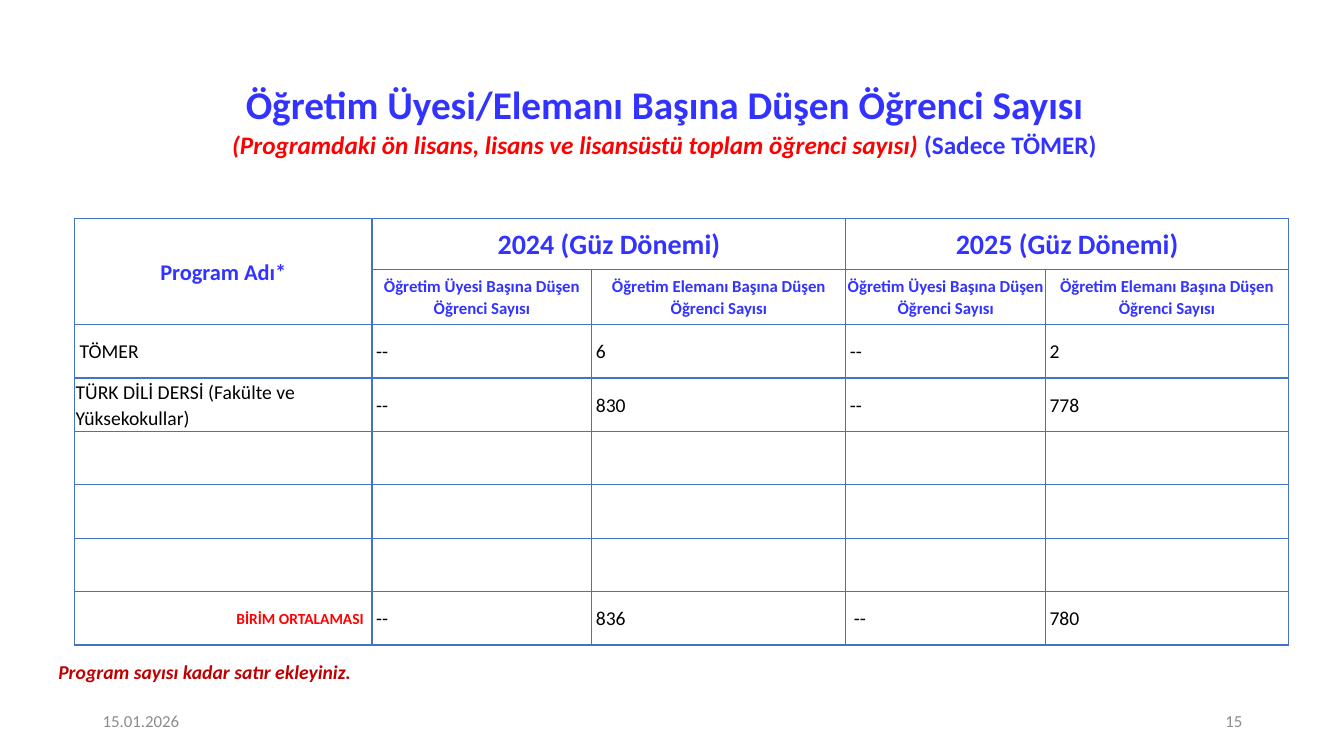
import dataclasses

import pptx
import pptx.dml.color
import pptx.enum.text
import pptx.oxml
import pptx.oxml.ns
import pptx.util

Inches = pptx.util.Inches
Align = pptx.enum.text.PP_ALIGN
Anchor = pptx.enum.text.MSO_ANCHOR


@dataclasses.dataclass(frozen=True)
class Theme:
    font: str = "Calibri"
    blue: str = "3333FF"
    red: str = "FF0000"
    dark_red: str = "C00000"
    black: str = "000000"
    grey: str = "8C8C8C"
    border: str = "4472C4"
    title_size: int = 28
    subtitle_size: int = 18
    period_size: int = 20
    program_size: int = 16
    body_size: int = 14
    small_size: int = 12
    average_size: int = 11
    line_spacing: float = 1.07


THEME = Theme()
COLUMN_WIDTHS = [2.95, 2.18, 2.52, 1.98, 2.41]
ROW_HEIGHTS = [0.5, 0.55] + [0.53] * 6
PERIODS = ["2024 (Güz Dönemi)", "2025 (Güz Dönemi)"]
MEASURES = ["Öğretim Üyesi Başına Düşen Öğrenci Sayısı",
            "Öğretim Elemanı Başına Düşen Öğrenci Sayısı"]
PROGRAMS = [
    ["TÖMER", "--", "6", "--", "2"],
    ["TÜRK DİLİ DERSİ (Fakülte ve Yüksekokullar)", "--", "830", "--", "778"],
]
AVERAGES = ["BİRİM ORTALAMASI", "--", "836", "--", "780"]
VALUE_INDENT = 0.04


def add_run(paragraph, text, *, size=THEME.body_size, color=THEME.black,
            bold=False, italic=False):
    run = paragraph.add_run()
    run.text = text
    run.font.name = THEME.font
    run.font.size = pptx.util.Pt(size)
    run.font.bold = bold
    run.font.italic = italic
    run.font.color.rgb = pptx.dml.color.RGBColor.from_string(color)


def add_text_box(slide, box, align=Align.LEFT, anchor=Anchor.MIDDLE):
    """Add an empty wrapping text box and return its first paragraph."""
    frame = slide.shapes.add_textbox(*map(Inches, box)).text_frame
    frame.word_wrap = True
    frame.vertical_anchor = anchor
    paragraph = frame.paragraphs[0]
    paragraph.alignment = align
    return paragraph


def add_title(slide, box):
    paragraph = add_text_box(slide, box, Align.CENTER)
    paragraph.line_spacing = THEME.line_spacing
    add_run(paragraph, "Öğretim Üyesi/Elemanı Başına Düşen Öğrenci Sayısı",
            size=THEME.title_size, color=THEME.blue, bold=True)
    paragraph.add_line_break()
    add_run(paragraph, "(Programdaki ön lisans, lisans ve lisansüstü toplam öğrenci sayısı) ",
            size=THEME.subtitle_size, color=THEME.red, bold=True, italic=True)
    add_run(paragraph, "(Sadece TÖMER)",
            size=THEME.subtitle_size, color=THEME.blue, bold=True)


def set_borders(cell):
    properties = cell._tc.get_or_add_tcPr()
    for position, side in enumerate(("lnL", "lnR", "lnT", "lnB")):
        properties.insert(position, pptx.oxml.parse_xml(
            f'<a:{side} {pptx.oxml.ns.nsdecls("a")} w="12700"><a:solidFill>'
            f'<a:srgbClr val="{THEME.border}"/></a:solidFill></a:{side}>'))


def write_cell(cell, text, *, align=Align.LEFT, left=0, right=0, **text_format):
    cell.margin_left, cell.margin_right = Inches(left), Inches(right)
    paragraph = cell.text_frame.paragraphs[0]
    paragraph.alignment = align
    paragraph.line_spacing = THEME.line_spacing
    add_run(paragraph, text, **text_format)


def add_student_table(slide, box):
    table = slide.shapes.add_table(
        len(ROW_HEIGHTS), len(COLUMN_WIDTHS), *map(Inches, box)).table
    table.first_row = table.horz_banding = False
    for column, width in zip(table.columns, COLUMN_WIDTHS):
        column.width = Inches(width)
    for row, height in zip(table.rows, ROW_HEIGHTS):
        row.height = Inches(height)
    for cell in table.iter_cells():
        cell.fill.background()
        cell.vertical_anchor = Anchor.MIDDLE
        cell.margin_top = cell.margin_bottom = 0
        set_borders(cell)

    # Headings: program name, then two measures under each period
    heading = dict(align=Align.CENTER, color=THEME.blue, bold=True)
    table.cell(0, 0).merge(table.cell(1, 0))
    write_cell(table.cell(0, 0), "Program Adı*", size=THEME.program_size, **heading)
    for index, period in enumerate(PERIODS):
        first = 1 + index * len(MEASURES)
        table.cell(0, first).merge(table.cell(0, first + len(MEASURES) - 1))
        write_cell(table.cell(0, first), period, size=THEME.period_size, **heading)
        for offset, measure in enumerate(MEASURES):
            write_cell(table.cell(1, first + offset), measure,
                       size=THEME.small_size, **heading)

    # Program names and the average label
    last = len(ROW_HEIGHTS) - 1
    write_cell(table.cell(2, 0), PROGRAMS[0][0], left=0.05)
    write_cell(table.cell(3, 0), PROGRAMS[1][0], left=0.01)
    write_cell(table.cell(last, 0), AVERAGES[0], align=Align.RIGHT, right=0.08,
               size=THEME.average_size, color=THEME.red, bold=True)

    # Values
    for row, record in ((2, PROGRAMS[0]), (3, PROGRAMS[1]), (last, AVERAGES)):
        for column, value in enumerate(record[1:], start=1):
            indent = VALUE_INDENT * (2 if (row, column) == (last, 3) else 1)
            write_cell(table.cell(row, column), value, left=indent)


def add_note(slide, box):
    paragraph = add_text_box(slide, box, anchor=Anchor.TOP)
    add_run(paragraph, "Program sayısı kadar satır ekleyiniz.",
            color=THEME.dark_red, bold=True, italic=True)


def add_footer(slide, box):
    left, top, width, height = box
    part_width = 3
    parts = [("15.01.2026", left, Align.LEFT),
             ("15", left + width - part_width, Align.RIGHT)]
    for text, part_left, align in parts:
        paragraph = add_text_box(slide, (part_left, top, part_width, height), align)
        add_run(paragraph, text, size=THEME.small_size, color=THEME.grey)


def main():
    presentation = pptx.Presentation()
    presentation.slide_width = Inches(13.33)
    presentation.slide_height = Inches(7.5)
    slide = presentation.slides.add_slide(presentation.slide_layouts[6])
    add_title(slide, (0.39, 0.71, 12.4, 0.92))
    add_student_table(slide, (0.74, 2.17, sum(COLUMN_WIDTHS), sum(ROW_HEIGHTS)))
    add_note(slide, (0.48, 6.5, 8.48, 0.34))
    add_footer(slide, (0.92, 6.95, 11.5, 0.4))
    presentation.save("out.pptx")


if __name__ == "__main__":
    main()
